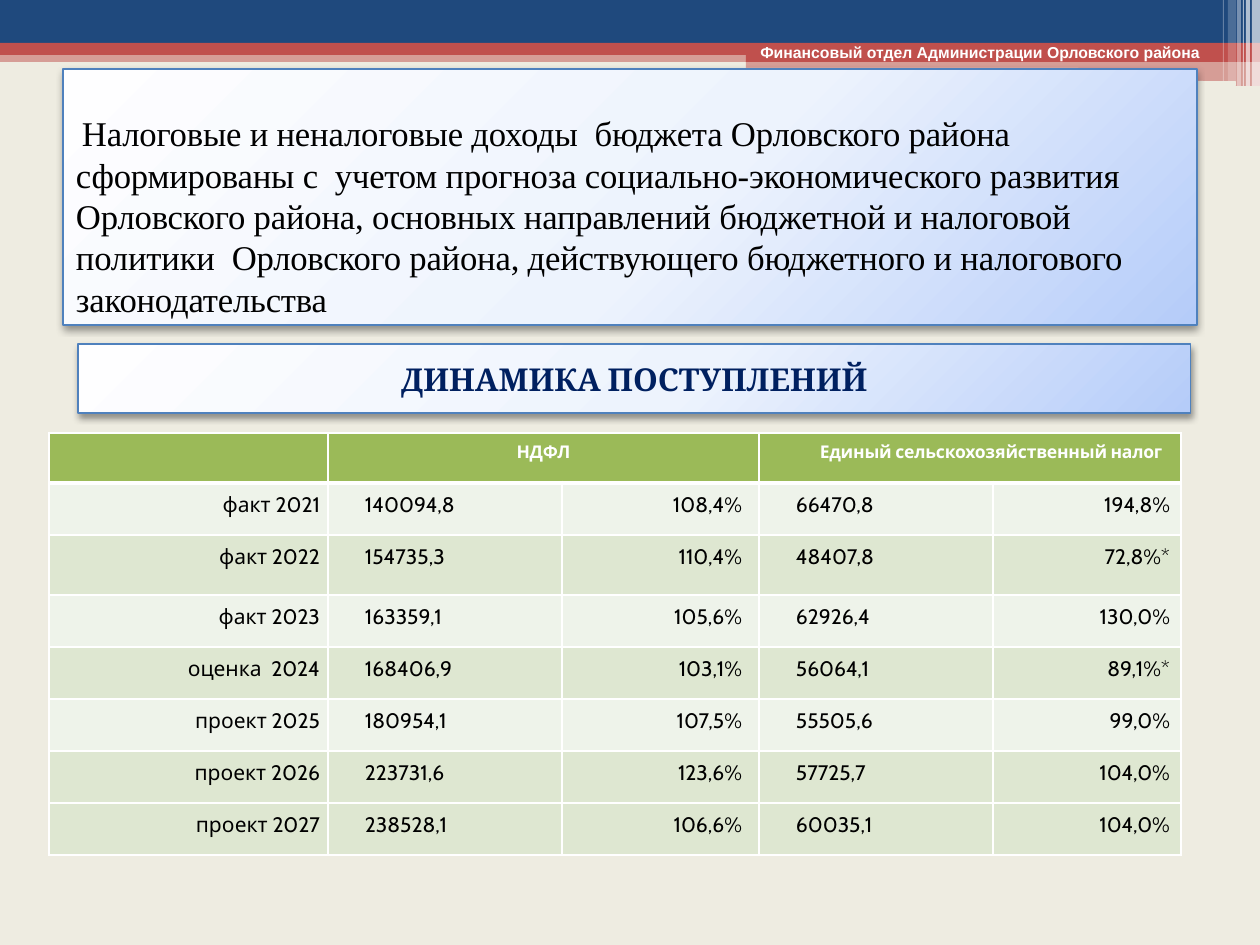
from lxml import etree
from pptx import Presentation
from pptx import util as u
from pptx.dml.color import RGBColor
from pptx.enum import shapes, text
from pptx.oxml import parse_xml
from pptx.oxml.ns import nsdecls, qn

PX = 914400 // 126  # one px in EMU

WHITE = RGBColor(0xFF, 0xFF, 0xFF)
BLACK = RGBColor(0, 0, 0)
CREAM = RGBColor(0xEE, 0xEC, 0xE1)
BLUE = RGBColor(0x1F, 0x49, 0x7D)
RED = RGBColor(0xC0, 0x50, 0x4D)
NAVY = RGBColor(0, 0x20, 0x60)
EDGE = RGBColor(0x4F, 0x81, 0xBD)
GREEN = RGBColor(0x9B, 0xBA, 0x58)
PALE = RGBColor(0xEE, 0xF3, 0xEA)
SAGE = RGBColor(0xDE, 0xE7, 0xD1)
GLOW = ((0, "FEFEFF"), (55, "EDF3FD"), (100, "B5CCF9"))

LEFT, MID, RIGHT = text.PP_ALIGN.LEFT, text.PP_ALIGN.CENTER, text.PP_ALIGN.RIGHT
TOP, CENTRE = text.MSO_ANCHOR.TOP, text.MSO_ANCHOR.MIDDLE
RECT = shapes.MSO_SHAPE.RECTANGLE
ROUND = shapes.MSO_SHAPE.ROUNDED_RECTANGLE


def put(obj, **vals):
    for name, val in vals.items():
        setattr(obj, name, val)


class Deck:
    def __init__(self, wide, high):
        self.prs = Presentation()
        put(self.prs, slide_width=wide * PX, slide_height=high * PX)
        self.slide = self.prs.slides.add_slide(self.prs.slide_layouts[5])
        self.shapes = self.slide.shapes
        back = self.slide.background.fill
        back.solid()
        back.fore_color.rgb = CREAM

    def words(self, frame, line, font, size, color, bold=False,
              align=LEFT, spc=0, pitch=None):
        para = frame.paragraphs[0]
        put(para, alignment=align, line_spacing=pitch)
        run = para.add_run()
        run.text = line
        put(run.font, name=font, size=u.Pt(size), bold=bold)
        run.font.color.rgb = color
        run.font._element.set("spc", str(spc))
        return para

    def bar(self, box, color, alpha=100, kind=RECT):
        shape = self.shapes.add_shape(kind, *(n * PX for n in box))
        shape.shadow.inherit = False
        shape.fill.solid()
        shape.fill.fore_color.rgb = color
        shape.line.fill.background()
        if alpha < 100:
            tone = shape._element.spPr.find(".//" + qn("a:srgbClr"))
            etree.SubElement(tone, qn("a:alpha")).set("val", str(alpha * 1000))
        return shape

    def panel(self, shape):
        """Give a shape the glowing fill, thin edge and soft shadow."""
        shape.fill.gradient()
        shape.fill.gradient_angle = 315
        stops = shape._element.spPr.find(".//" + qn("a:gsLst"))
        for stop in list(stops):
            stops.remove(stop)
        for pos, tone in GLOW:
            stops.append(parse_xml(
                f'<a:gs {nsdecls("a")} pos="{pos * 1000}">'
                f'<a:srgbClr val="{tone}"/></a:gs>'))
        shape.line.color.rgb = EDGE
        shape.line.width = u.Pt(0.75)
        shape.shadow.inherit = False
        glow = shape._element.spPr.find(qn("a:effectLst"))
        glow.append(parse_xml(
            f'<a:outerShdw {nsdecls("a")} blurRad="52000" dist="25400" '
            'dir="5400000" rotWithShape="0"><a:srgbClr val="000000">'
            '<a:alpha val="40000"/></a:srgbClr></a:outerShdw>'))

    def title(self, box, line, **form):
        shape = self.shapes.title
        left, top, wide, high = (n * PX for n in box)
        put(shape, left=left, top=top, width=wide, height=high)
        self.shapes._spTree.append(shape._element)  # in front of the bands
        self.panel(shape)
        frame = shape.text_frame
        put(frame, word_wrap=True, vertical_anchor=TOP,
            auto_size=text.MSO_AUTO_SIZE.NONE, margin_left=13 * PX,
            margin_right=13 * PX, margin_top=43 * PX, margin_bottom=0)
        para = self.words(frame, line, **form)
        para._p.get_or_add_pPr().set("indent", str(6 * PX))

    def label(self, box, line, **form):
        frame = self.shapes.add_textbox(*(n * PX for n in box)).text_frame
        frame.word_wrap = True
        self.words(frame, line, **form)

    def banner(self, box, line, **form):
        shape = self.bar(box, WHITE)
        self.panel(shape)
        put(shape.text_frame, word_wrap=True, vertical_anchor=CENTRE)
        self.words(shape.text_frame, line, **form)

    def grid(self, left, top, cols, rows):
        frame = self.shapes.add_table(
            len(rows), len(cols), left * PX, top * PX,
            sum(cols) * PX, sum(rows) * PX)
        table = frame.table
        put(table, first_row=False, horz_banding=False)
        for col, wide in zip(table.columns, cols):
            col.width = wide * PX
        for row, high in zip(table.rows, rows):
            row.height = high * PX
        return table

    def cell(self, cell, fill, edges, line="", pad=(0, 0), **form):
        props = cell._tc.get_or_add_tcPr()
        for side, pts in zip("LRTB", edges):
            props.append(parse_xml(
                f'<a:ln{side} {nsdecls("a")} w="{pts * 12700}"><a:solidFill>'
                f'<a:srgbClr val="{WHITE}"/></a:solidFill></a:ln{side}>'))
        cell.fill.solid()
        cell.fill.fore_color.rgb = fill
        put(cell, margin_left=pad[0] * PX, margin_right=pad[1] * PX,
            margin_top=9 * PX, margin_bottom=0, vertical_anchor=TOP)
        if line:
            self.words(cell.text_frame, line, font="Cabin", **form)


BANDS = (
    ((0, 50, 1260, 12), RED, 50), ((0, 0, 1260, 43), BLUE, 100),
    ((0, 43, 1260, 12), RED, 100), ((746, 49, 514, 13), RED, 100),
    ((746, 61, 514, 25), RED, 50),
    ((745, 68, 422, 4), CREAM, 100, ROUND),
    ((1016, 81, 220, 5), CREAM, 100, ROUND),
)
# left, width, height, opacity of the light stripes
STRIPES = ((1252, 8, 86, 65), (1246, 4, 86, 65), (1243, 1, 86, 60),
           (1237, 4, 86, 40), (1228, 8, 81, 20), (1223, 1, 81, 30))

HEADS = ((1, "НДФЛ", MID, 0), (3, "Единый сельскохозяйственный налог", LEFT, 61))
DATA = (
    ("факт 2021", "140094,8", "108,4%", "66470,8", "194,8%"),
    ("факт 2022", "154735,3", "110,4%", "48407,8", "72,8%*"),
    ("факт 2023", "163359,1", "105,6%", "62926,4", "130,0%"),
    ("оценка  2024", "168406,9", "103,1%", "56064,1", "89,1%*"),
    ("проект 2025", "180954,1", "107,5%", "55505,6", "99,0%"),
    ("проект 2026", "223731,6", "123,6%", "57725,7", "104,0%"),
    ("проект 2027", "238528,1", "106,6%", "60035,1", "104,0%"),
)
TONES = (PALE, SAGE, PALE, SAGE, PALE, SAGE, SAGE)
COLS = (279, 234, 197, 234, 188)
ROWS = (50, 52, 60, 52, 52, 52, 52, 52)
# alignment and left/right padding of each column
FORMS = ((RIGHT, (0, 8)), (LEFT, (37, 0)), (RIGHT, (0, 17)),
         (LEFT, (37, 0)), (RIGHT, (0, 11)))


def main():
    deck = Deck(1260, 945)

    # Header bands and stripes
    for band in BANDS:
        deck.bar(*band)
    for left, wide, high, alpha in STRIPES:
        deck.bar((left, 0, wide, high), WHITE, alpha)
    deck.label((748, 37, 493, 32),
               "Финансовый отдел Администрации Орловского района",
               font="Arial", size=9, color=WHITE, bold=True)

    # Title panel
    deck.title((63, 69, 1134, 256),
               "Налоговые и неналоговые доходы  бюджета Орловского района "
               "сформированы с  учетом прогноза социально-экономического "
               "развития Орловского района, основных направлений бюджетной и "
               "налоговой политики  Орловского района, действующего "
               "бюджетного и налогового законодательства",
               font="Times New Roman", size=19.8, color=BLACK, spc=-10,
               pitch=u.Pt(23.7))

    # Revenue table
    table = deck.grid(49, 433, COLS, ROWS)
    for col in range(len(COLS)):
        deck.cell(table.cell(0, col), GREEN, (1, 1, 1, 3))
    for col, line, align, pad in HEADS:
        head = table.cell(0, col)
        head.merge(table.cell(0, col + 1))
        head.margin_left = pad * PX
        deck.words(head.text_frame, line, "Cabin", 10, WHITE, True, align, -10)
    for row, (items, tone) in enumerate(zip(DATA, TONES), 1):
        edges = (1, 1, 3 if row == 1 else 1, 1)
        for col, (line, (align, pad)) in enumerate(zip(items, FORMS)):
            deck.cell(table.cell(row, col), tone, edges, line, pad,
                      size=12, color=BLACK, align=align)

    # Table banner
    deck.banner((78, 344, 1113, 69), "ДИНАМИКА ПОСТУПЛЕНИЙ", font="Cambria",
                size=18, color=NAVY, bold=True, align=MID)
    deck.prs.save("out.pptx")


if __name__ == "__main__":
    main()
